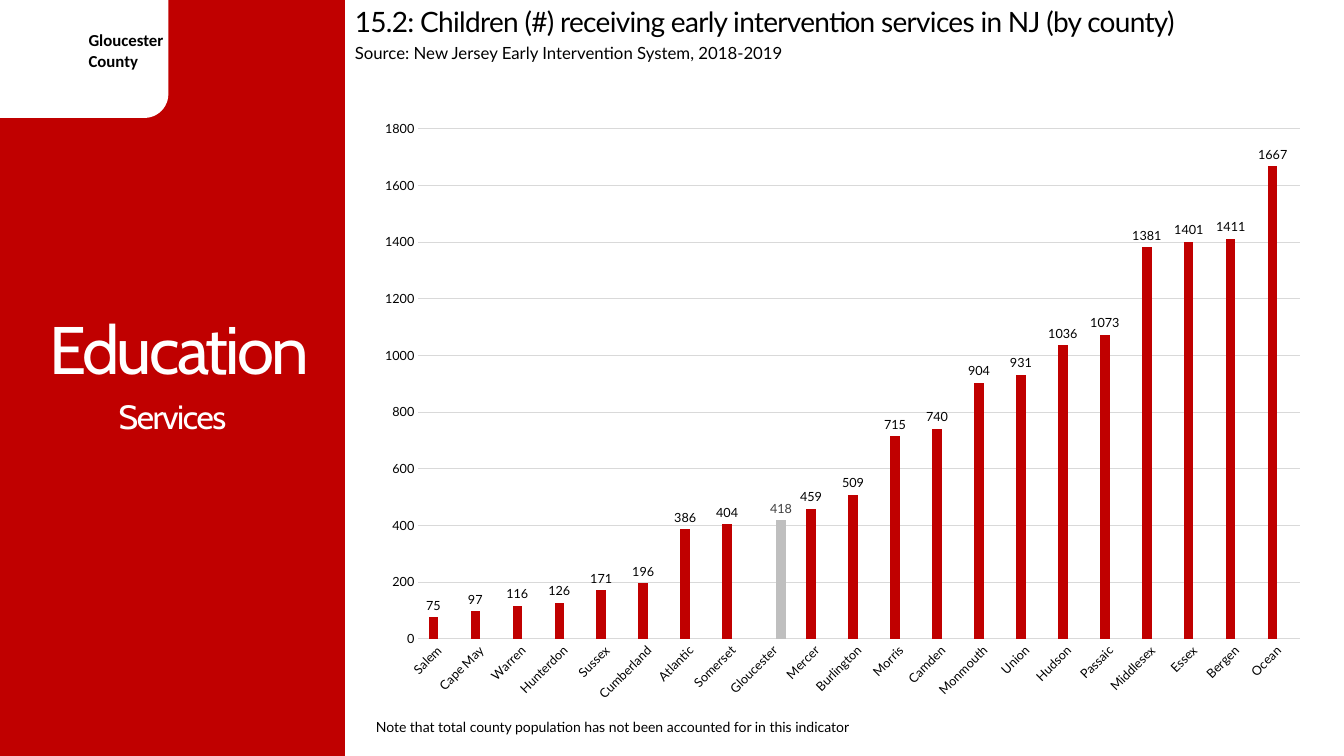
from pptx import Presentation
from pptx.chart.data import CategoryChartData
from pptx.dml.color import RGBColor
from pptx.enum.chart import XL_CHART_TYPE, XL_LABEL_POSITION, XL_TICK_MARK
from pptx.enum.shapes import MSO_SHAPE
from pptx.enum.text import MSO_ANCHOR, PP_ALIGN
from pptx.util import Inches, Pt

RECT, ROUND = MSO_SHAPE.RECTANGLE, MSO_SHAPE.ROUNDED_RECTANGLE
COLUMN = XL_CHART_TYPE.COLUMN_CLUSTERED
OUTSIDE = XL_LABEL_POSITION.OUTSIDE_END
NO_TICK = XL_TICK_MARK.NONE
MIDDLE, CENTER = MSO_ANCHOR.MIDDLE, PP_ALIGN.CENTER

COLORS = {
    "red": "C00000", "white": "FFFFFF", "black": "000000",
    "gray": "BFBFBF", "dark": "404040", "grid": "D9D9D9",
}
FOCUS = "Gloucester"
COUNTS = {
    "Salem": 75, "Cape May": 97, "Warren": 116, "Hunterdon": 126,
    "Sussex": 171, "Cumberland": 196, "Atlantic": 386, "Somerset": 404,
    "Gloucester": 418, "Mercer": 459, "Burlington": 509, "Morris": 715,
    "Camden": 740, "Monmouth": 904, "Union": 931, "Hudson": 1036,
    "Passaic": 1073, "Middlesex": 1381, "Essex": 1401, "Bergen": 1411,
    "Ocean": 1667,
}


def rgb(name):
    return RGBColor.from_string(COLORS[name])


def style(font, size, color="black", face="Lato", bold=False):
    font.size, font.name, font.bold = Pt(size), face, bold
    font.color.rgb = rgb(color)


def add_block(slide, kind, box, color):
    block = slide.shapes.add_shape(kind, *map(Inches, box))
    block.shadow.inherit = False
    block.fill.solid()
    block.fill.fore_color.rgb = rgb(color)
    block.line.fill.background()


def add_text(slide, box, text, size, color="black", face="Lato",
             bold=False, space=0, center=False):
    frame = slide.shapes.add_textbox(*map(Inches, box)).text_frame
    frame.word_wrap = True
    frame.text = text
    par = frame.paragraphs[0]
    run = par.runs[0]
    style(run.font, size, color, face, bold)
    if space:
        run.font._element.set("spc", str(int(space * 100)))
    if center:
        par.alignment, par.line_spacing = CENTER, 0.9
    return frame


def add_panel(slide, left, top, width, height):
    # Red side panel with the county tab in its corner
    add_block(slide, RECT, (left, top, width, height), "red")
    add_block(slide, ROUND, (left - 0.33, top - 0.25, 2, 1.42), "white")
    add_text(slide, (left + 0.78, top + 0.25, 0.97, 0.5),
             "Gloucester County", 12, face="Calibri", bold=True)

    # Section name, raised above the middle to make room for the topic
    name = add_text(slide, (left, top + 0.75, 3.55, 6), "Education", 48,
                    "white", "Cabin", space=-2, center=True)
    name.vertical_anchor = MIDDLE
    name.margin_bottom = Inches(0.54)
    add_text(slide, (left, top + 3.92, width, 0.46), "Services", 24,
             "white", "Cabin", space=-1, center=True)


def add_head(slide, left, top, width):
    add_text(slide, (left, top, width, 0.44),
             "15.2: Children (#) receiving early intervention services "
             "in NJ (by county)", 20, space=-0.5)
    add_text(slide, (left, top + 0.37, 9.19, 0.3),
             "Source: New Jersey Early Intervention System, 2018-2019", 12)


def set_line(line, color):
    line.color.rgb = rgb(color)
    line.width = Pt(0.75)


def add_bars(slide, left, top, width, height):
    # The focus county has its own series, so that it stands out
    data = CategoryChartData()
    data.categories = list(COUNTS)
    data.add_series("Series 1", [None if c == FOCUS else n
                                 for c, n in COUNTS.items()])
    data.add_series("Series 2", [n if c == FOCUS else None
                                 for c, n in COUNTS.items()])
    box = map(Inches, (left, top, width, height))
    chart = slide.shapes.add_chart(COLUMN, *box, data).chart
    chart.has_legend = chart.has_title = False
    style(chart.font, 10, face="Calibri")

    # Axes
    cats, vals = chart.category_axis, chart.value_axis
    for axis in (cats, vals):
        axis.major_tick_mark = axis.minor_tick_mark = NO_TICK
        style(axis.tick_labels.font, 9)
    set_line(cats.format.line, "grid")
    cats._element.txPr.bodyPr.set("rot", "-2700000")
    vals.minimum_scale, vals.maximum_scale = 0, 1800
    vals.major_unit = 200
    vals.format.line.fill.background()
    set_line(vals.major_gridlines.format.line, "grid")

    # Bars and their values
    plot = chart.plots[0]
    plot.gap_width, plot.overlap = 219, -27
    plot.vary_by_categories = False
    for bars, fill, ink in zip(plot.series, ("red", "gray"),
                               ("black", "dark")):
        bars.invert_if_negative = False
        bars.format.fill.solid()
        bars.format.fill.fore_color.rgb = rgb(fill)
        labels = bars.data_labels
        labels.show_value = True
        labels.position = OUTSIDE
        style(labels.font, 9, ink)


def add_note(slide, left, top, width):
    add_text(slide, (left, top, width, 0.27),
             "Note that total county population has not been accounted "
             "for in this indicator", 10)


def main():
    deck = Presentation()
    deck.slide_width, deck.slide_height = Inches(13.33), Inches(7.5)
    slide = deck.slides.add_slide(deck.slide_layouts[6])
    add_panel(slide, 0, 0, 3.42, 7.5)
    add_head(slide, 3.42, 0, 10.25)
    add_bars(slide, 3.63, 1.08, 9.45, 6)
    add_note(slide, 3.63, 7.08, 9.33)
    deck.save("out.pptx")


if __name__ == "__main__":
    main()
